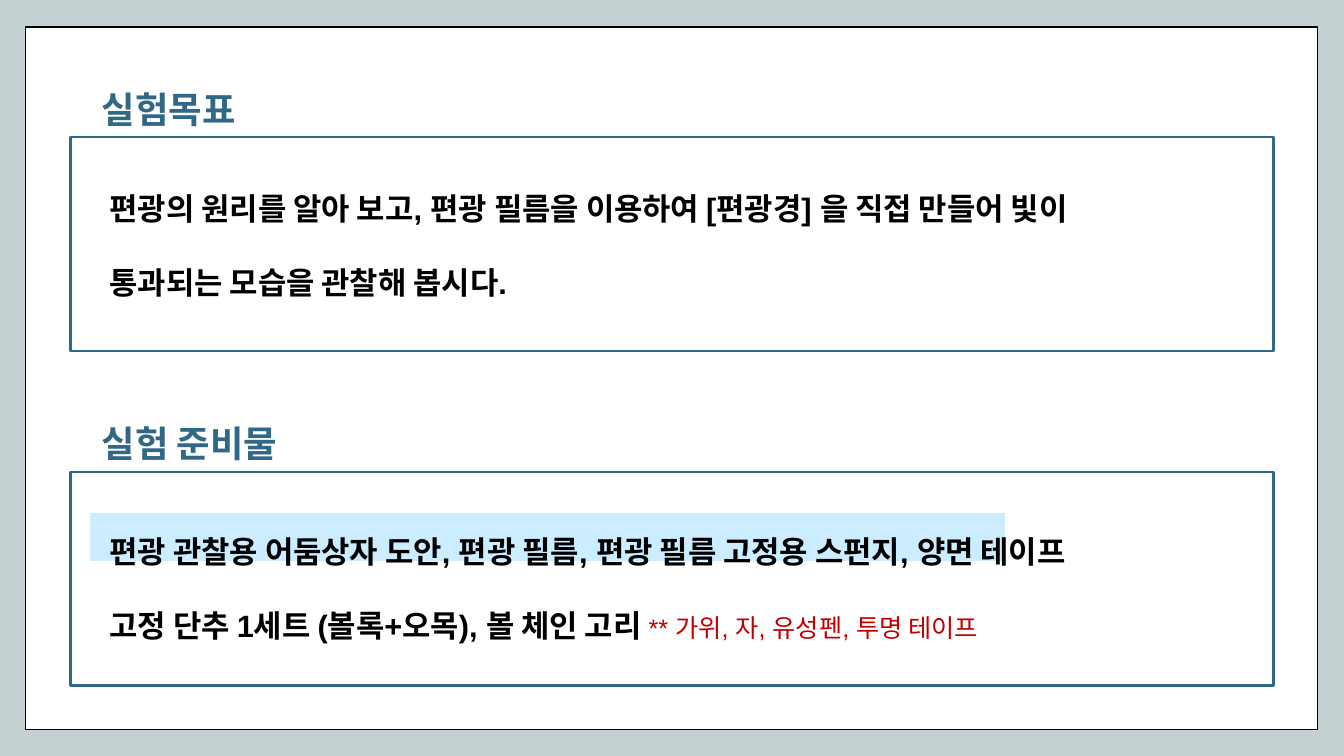
import pptx
import pptx.util
import pptx.dml.color
import pptx.enum.shapes
import pptx.enum.text
from pptx.util import Inches

COLORS = {
    "background": "C3D1D3",
    "paper": "FFFFFF",
    "ink": "000000",
    "accent": "316886",
    "highlight": "CCECFF",
    "extra": "C00000",
}

GOAL = [
    [("편광의 원리를 알아 보고, 편광 필름을 이용하여 [편광경] 을 직접 만들어 빛이", False)],
    [("통과되는 모습을 관찰해 봅시다.", False)],
]
# Each run is (wording, whether it is an extra item to bring)
MATERIALS = [
    [("편광 관찰용 어둠상자 도안, 편광 필름, 편광 필름 고정용 스펀지, 양면 테이프", False)],
    [("고정 단추 1세트 (볼록+오목), 볼 체인 고리 ", False),
     ("** 가위, 자, 유성펜, 투명 테이프", True)],
]


def rgb(name):
    return pptx.dml.color.RGBColor.from_string(COLORS[name])


def add_box(slide, left, top, width, height, fill, line, weight):
    box = slide.shapes.add_shape(
        pptx.enum.shapes.MSO_SHAPE.RECTANGLE,
        Inches(left), Inches(top), Inches(width), Inches(height))
    box.shadow.inherit = False
    box.fill.solid()
    box.fill.fore_color.rgb = rgb(fill)
    box.line.color.rgb = rgb(line)
    box.line.width = pptx.util.Pt(weight)


def add_frame(slide, left, top, width, height):
    frame = slide.shapes.add_textbox(
        Inches(left), Inches(top), Inches(width), Inches(height)).text_frame
    frame.word_wrap = True
    frame.vertical_anchor = pptx.enum.text.MSO_ANCHOR.TOP
    return frame


def add_run(paragraph, wording, font, size, color, bold):
    run = paragraph.add_run()
    run.text = wording
    run.font.name = font
    run.font.size = pptx.util.Pt(size)
    run.font.bold = bold
    run.font.color.rgb = rgb(color)


def add_section(slide, left, top, width, height, heading, lines,
                text_offset, text_height, highlighted=False):
    # Heading above the panel
    title = add_frame(slide, left + 0.21, top - 0.6, 2.3, 0.48)
    title.margin_left = title.margin_right = Inches(0.1)
    title.margin_top = title.margin_bottom = Inches(0.1)
    add_run(title.paragraphs[0], heading, "Calibri", 26, "accent", True)

    # Panel and its highlight band
    add_box(slide, left, top, width, height, "paper", "accent", 1.75)
    if highlighted:
        add_box(slide, left + 0.18, top + 0.4, 9.1, 0.5, "highlight", "paper", 1.5)

    # Body text
    body = add_frame(slide, left + 0.29, top + text_offset, width - 0.4, text_height)
    for index, line in enumerate(lines):
        paragraph = body.add_paragraph() if index else body.paragraphs[0]
        paragraph.line_spacing = 2.0
        for wording, extra in line:
            if extra:
                add_run(paragraph, wording, "Arial", 18, "extra", False)
            else:
                add_run(paragraph, wording, "Arial", 22, "ink", True)


def main():
    deck = pptx.Presentation()
    deck.slide_width = Inches(13.33)
    deck.slide_height = Inches(7.5)
    slide = deck.slides.add_slide(deck.slide_layouts[6])

    # Background and page
    slide.background.fill.solid()
    slide.background.fill.fore_color.rgb = rgb("background")
    add_box(slide, 0.25, 0.27, 12.82, 6.97, "paper", "ink", 1)

    # Goal and materials
    add_section(slide, 0.7, 1.36, 11.93, 2.12, "실험목표", GOAL, 0.11, 1.46)
    add_section(slide, 0.7, 4.68, 11.93, 2.12, "실험 준비물", MATERIALS, 0.19, 1.58,
                highlighted=True)

    deck.save("out.pptx")


if __name__ == "__main__":
    main()
